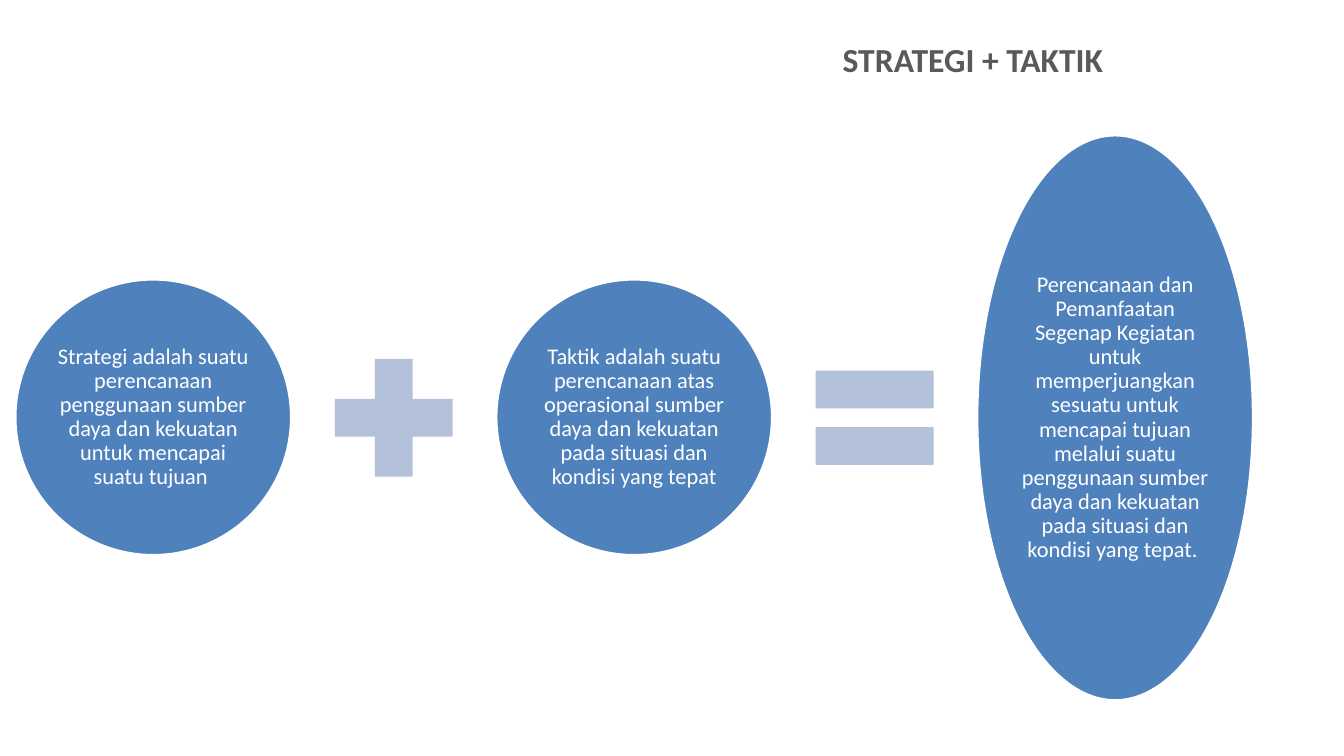
from dataclasses import dataclass
from pptx import Presentation
from pptx.dml.color import RGBColor
from pptx.enum.shapes import MSO_SHAPE
from pptx.enum.text import MSO_ANCHOR, PP_ALIGN
from pptx.util import Pt


@dataclass
class Theme:
    font: str = "Calibri"
    blue: RGBColor = RGBColor(0x4F, 0x81, 0xBD)
    pale: RGBColor = RGBColor(0xB3, 0xC1, 0xDB)
    gray: RGBColor = RGBColor(0x59, 0x59, 0x59)
    white: RGBColor = RGBColor(0xFF, 0xFF, 0xFF)
    head: Pt = Pt(24)
    body: Pt = Pt(16)


def px(n):
    return n * 9144


def style(para, size, color):
    para.font.name = theme.font
    para.font.size = size
    para.font.color.rgb = color


theme = Theme()
deck = Presentation()
deck.slide_width, deck.slide_height = px(1333), px(750)
slide = deck.slides.add_slide(deck.slide_layouts[6])

title = slide.shapes.add_textbox(px(826), px(34), px(434), px(47)).text_frame
title.word_wrap = True
title.text = "STRATEGI + TAKTIK"
style(title.paragraphs[0], theme.head, theme.gray)
title.paragraphs[0].font.bold = True

wide, sign, gap, mid = 274, 159, 22, 414
parts = [
    (MSO_SHAPE.OVAL, wide, wide, "Strategi adalah suatu perencanaan penggunaan sumber daya dan kekuatan untuk mencapai suatu tujuan "),
    (MSO_SHAPE.MATH_PLUS, sign, sign, ""),
    (MSO_SHAPE.OVAL, wide, wide, "Taktik adalah suatu perencanaan atas operasional sumber daya dan kekuatan pada situasi dan kondisi yang tepat"),
    (MSO_SHAPE.MATH_EQUAL, sign, sign, ""),
    (MSO_SHAPE.OVAL, wide, 561, "Perencanaan dan Pemanfaatan Segenap Kegiatan untuk memperjuangkan sesuatu untuk mencapai tujuan melalui suatu penggunaan sumber daya dan kekuatan pada situasi dan kondisi yang tepat. "),
]

left = 15
for kind, width, height, text in parts:
    shape = slide.shapes.add_shape(kind, px(left), px(mid - height // 2), px(width), px(height))
    shape.shadow.inherit = False
    shape.fill.solid()
    left += width + gap
    if not text:
        shape.fill.fore_color.rgb = theme.pale
        shape.line.fill.background()
        continue
    shape.fill.fore_color.rgb = theme.blue
    shape.line.color.rgb = theme.white
    shape.line.width = Pt(2)
    frame = shape.text_frame
    frame.word_wrap = True
    frame.vertical_anchor = MSO_ANCHOR.MIDDLE
    frame.margin_left = frame.margin_right = px(2)
    frame.margin_top = frame.margin_bottom = px(2)
    frame.text = text
    para = frame.paragraphs[0]
    para.alignment = PP_ALIGN.CENTER
    para.line_spacing = 0.9
    style(para, theme.body, theme.white)

deck.save("out.pptx")
